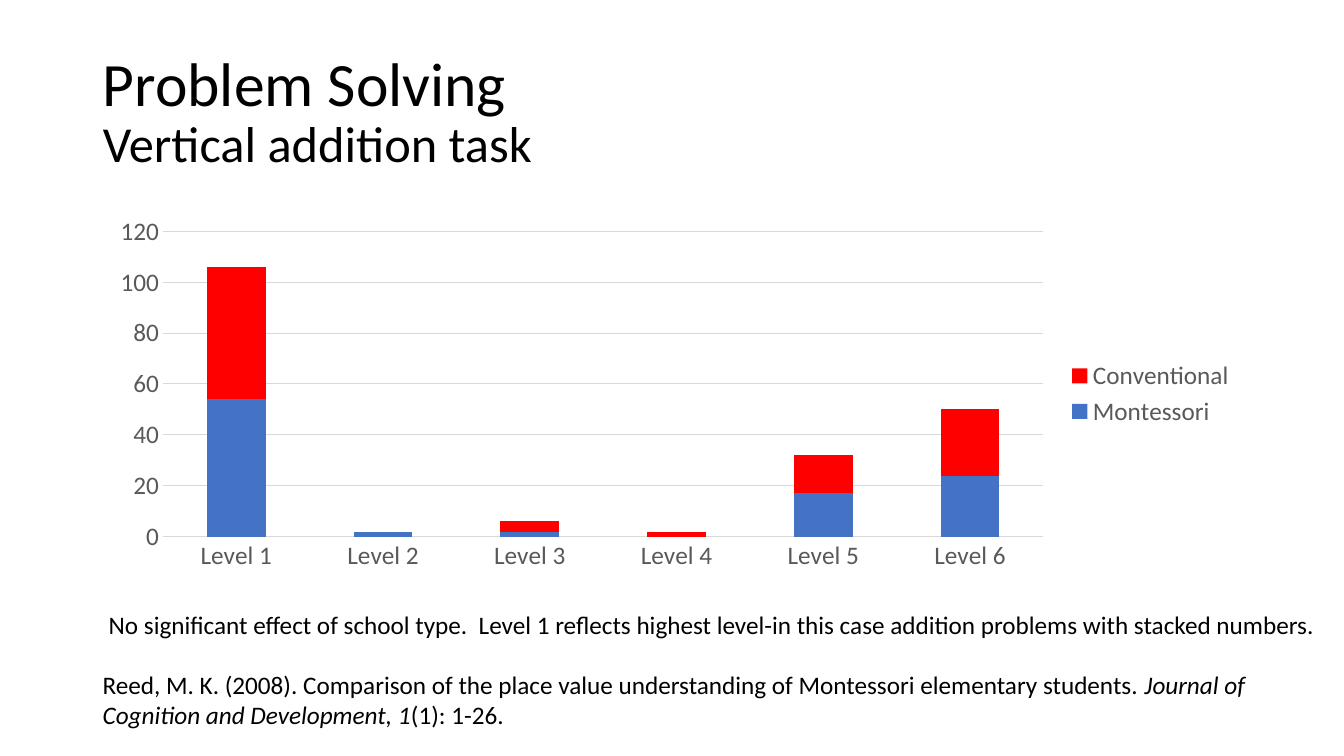
import dataclasses

import lxml.etree
import pptx
import pptx.chart.chart
import pptx.chart.data
import pptx.dml.color
import pptx.enum.chart
import pptx.enum.text
import pptx.oxml
import pptx.oxml.ns
import pptx.slide
import pptx.text.text
import pptx.util

SLIDE_WIDTH = pptx.util.Inches(13.33)
SLIDE_HEIGHT = pptx.util.Inches(7.5)
FONT = "Calibri"
BLACK = pptx.dml.color.RGBColor(0x00, 0x00, 0x00)
LABEL_GREY = pptx.dml.color.RGBColor(0x59, 0x59, 0x59)
GRID_GREY = pptx.dml.color.RGBColor(0xD9, 0xD9, 0xD9)
BLUE = pptx.dml.color.RGBColor(0x44, 0x72, 0xC4)
RED = pptx.dml.color.RGBColor(0xFF, 0x00, 0x00)
LEVELS = [f"Level {number}" for number in range(1, 7)]


@dataclasses.dataclass(frozen=True)
class Area:
    """A rectangle given in percent of the slide's width and height."""

    left: float
    top: float
    width: float
    height: float

    def box(self) -> tuple[int, int, int, int]:
        """Return left, top, width and height as lengths."""
        return (
            int(SLIDE_WIDTH * self.left / 100),
            int(SLIDE_HEIGHT * self.top / 100),
            int(SLIDE_WIDTH * self.width / 100),
            int(SLIDE_HEIGHT * self.height / 100),
        )


@dataclasses.dataclass(frozen=True)
class Phrase:
    """A stretch of text in one style."""

    text: str
    italic: bool = False


@dataclasses.dataclass(frozen=True)
class Note:
    """A paragraph below the chart."""

    area: Area
    phrases: tuple[Phrase, ...]
    wrap: bool


@dataclasses.dataclass(frozen=True)
class School:
    """The results of one school type."""

    name: str
    results: tuple[int, ...]
    color: pptx.dml.color.RGBColor


TITLE_AREA = Area(6.9, 5.33, 86.27, 19.33)
CHART_AREA = Area(7.35, 26.67, 85.3, 50.8)
PLOT_SHARES = {"x": 0.056, "y": 0.077, "w": 0.768, "h": 0.796}
SCHOOLS = (
    School("Montessori", (54, 2, 2, 0, 17, 24), BLUE),
    School("Conventional", (52, 0, 4, 2, 15, 26), RED),
)
NOTES = (
    Note(
        Area(6.9, 87.87, 88.07, 9.47),
        (
            Phrase(
                "Reed, M. K. (2008). Comparison of the place value understanding "
                "of Montessori elementary students. "
            ),
            Phrase("Journal of Cognition and Development, 1", italic=True),
            Phrase("(1): 1-26."),
        ),
        wrap=True,
    ),
    Note(
        Area(7.35, 80, 92.2, 5.33),
        (
            Phrase(
                "No significant effect of school type.  Level 1 reflects highest "
                "level-in this case addition problems with stacked numbers."
            ),
        ),
        wrap=False,
    ),
)


def style_font(
    font: pptx.text.text.Font, size: float, color: pptx.dml.color.RGBColor = BLACK
) -> None:
    """Apply the slide's typeface with a size and colour."""
    font.name = FONT
    font.size = pptx.util.Pt(size)
    font.color.rgb = color


def write_title(slide: pptx.slide.Slide) -> None:
    """Place the title with its smaller second line."""
    title = slide.shapes.title
    title.left, title.top, title.width, title.height = TITLE_AREA.box()
    frame = title.text_frame
    frame.text = "Problem Solving\vVertical addition task"
    frame.auto_size = pptx.enum.text.MSO_AUTO_SIZE.NONE
    frame.vertical_anchor = pptx.enum.text.MSO_ANCHOR.MIDDLE
    heading = frame.paragraphs[0]
    heading.alignment = pptx.enum.text.PP_ALIGN.LEFT
    heading.line_spacing = 0.9
    for run, size in zip(heading.runs, (44, 36)):
        style_font(run.font, size)


def write_note(slide: pptx.slide.Slide, note: Note) -> None:
    """Add a note as a text box."""
    frame = slide.shapes.add_textbox(*note.area.box()).text_frame
    frame.word_wrap = note.wrap
    frame.auto_size = pptx.enum.text.MSO_AUTO_SIZE.SHAPE_TO_FIT_TEXT
    for phrase in note.phrases:
        run = frame.paragraphs[0].add_run()
        run.text = phrase.text
        style_font(run.font, 18)
        run.font.italic = phrase.italic


def place_plot(chart: pptx.chart.chart.Chart) -> None:
    """Fix the inner plot area at its shares of the chart."""
    plot_area = chart.plots[0]._element.getparent()
    for automatic in plot_area.findall(pptx.oxml.ns.qn("c:layout")):
        plot_area.remove(automatic)
    layout = lxml.etree.Element(pptx.oxml.ns.qn("c:layout"))
    manual = lxml.etree.SubElement(layout, pptx.oxml.ns.qn("c:manualLayout"))
    settings = {"layoutTarget": "inner", "xMode": "edge", "yMode": "edge", **PLOT_SHARES}
    for tag, value in settings.items():
        lxml.etree.SubElement(manual, pptx.oxml.ns.qn(f"c:{tag}"), val=str(value))
    plot_area.insert(0, layout)


def draw_chart(slide: pptx.slide.Slide) -> None:
    """Add the stacked results by level and school type."""
    results = pptx.chart.data.CategoryChartData()
    results.categories = LEVELS
    for school in SCHOOLS:
        results.add_series(school.name, school.results)
    chart = slide.shapes.add_chart(
        pptx.enum.chart.XL_CHART_TYPE.COLUMN_STACKED, *CHART_AREA.box(), results
    ).chart
    style_font(chart.font, 10)
    chart.has_title = False
    chart.has_legend = True
    chart.legend.position = pptx.enum.chart.XL_LEGEND_POSITION.RIGHT
    chart.legend.include_in_layout = False
    style_font(chart.legend.font, 18, LABEL_GREY)

    columns = chart.plots[0]
    columns.gap_width = 150
    columns.overlap = 100
    columns.vary_by_categories = False
    for series, school in zip(columns.series, SCHOOLS):
        series.format.fill.solid()
        series.format.fill.fore_color.rgb = school.color

    levels, scores = chart.category_axis, chart.value_axis
    for axis in (levels, scores):
        axis.major_tick_mark = pptx.enum.chart.XL_TICK_MARK.NONE
        axis.minor_tick_mark = pptx.enum.chart.XL_TICK_MARK.NONE
        style_font(axis.tick_labels.font, 18, LABEL_GREY)
    scores.minimum_scale, scores.maximum_scale, scores.major_unit = 0, 120, 20
    scores.has_major_gridlines = True
    scores.format.line.fill.background()
    for line in (levels.format.line, scores.major_gridlines.format.line):
        line.color.rgb = GRID_GREY
        line.width = pptx.util.Pt(0.75)
    place_plot(chart)


def main() -> None:
    """Build and save the slide."""
    presentation = pptx.Presentation()
    presentation.slide_width, presentation.slide_height = SLIDE_WIDTH, SLIDE_HEIGHT
    slide = presentation.slides.add_slide(presentation.slide_layouts.get_by_name("Title Only"))
    write_title(slide)
    draw_chart(slide)
    for note in NOTES:
        write_note(slide, note)
    presentation.save("out.pptx")


if __name__ == "__main__":
    main()
